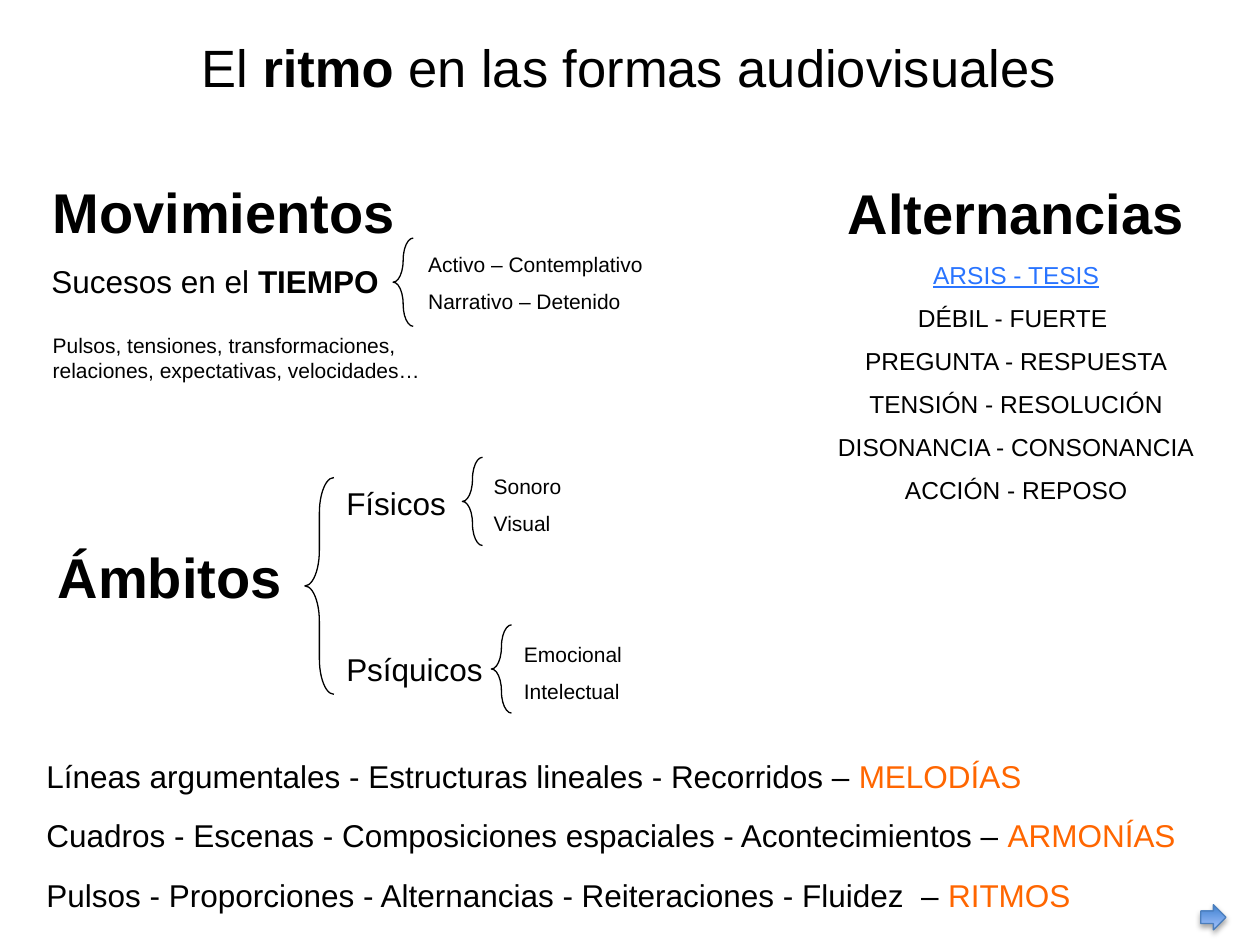
"""Build a slide on rhythm in audiovisual forms."""
from dataclasses import dataclass
from typing import NamedTuple

from lxml.etree import SubElement
from pptx import Presentation
from pptx.dml.color import RGBColor
from pptx.enum.shapes import MSO_SHAPE as Form
from pptx.enum.text import MSO_ANCHOR as Anchor, MSO_AUTO_SIZE as Fit, PP_ALIGN as Align
from pptx.oxml.ns import qn
from pptx.util import Inches, Pt

HUES = {"ink": "000000", "link": "2974FF", "key": "FF6600",
        "deep": "3F80CE", "pale": "A4C4FF", "edge": "4B7EBC"}
FRAME = {"word_wrap": True, "auto_size": Fit.SHAPE_TO_FIT_TEXT,
         "vertical_anchor": Anchor.TOP}


class Span(NamedTuple):
    text: str
    bold: bool = False
    hue: str = "ink"
    line: bool = False


class Row(NamedTuple):
    spans: list[Span]
    size: float
    gap: float = 0


@dataclass
class Block:
    box: tuple[float, float, float, float]
    rows: list[Row]
    align: Align = Align.LEFT


@dataclass
class Brace:
    box: tuple[float, float, float, float]
    bend: float = 1.23


def tint(name: str) -> RGBColor:
    return RGBColor.from_string(HUES[name])


def apply(item, values: dict) -> None:
    for name, value in values.items():
        setattr(item, name, value)


def place(shape, box: tuple) -> None:
    names = ("left", "top", "width", "height")
    apply(shape, dict(zip(names, map(Inches, box))))


def write(shape, block: Block) -> None:
    place(shape, block.box)
    frame = shape.text_frame
    apply(frame, FRAME)
    for i, row in enumerate(block.rows):
        para = frame.add_paragraph() if i else frame.paragraphs[0]
        apply(para, {"alignment": block.align, "space_before": Pt(row.gap if i else 0)})
        for span in row.spans:
            run = para.add_run()
            run.text = span.text
            apply(run.font, {"name": "Arial", "size": Pt(row.size),
                             "bold": span.bold, "underline": span.line})
            run.font.color.rgb = tint(span.hue)


def plain(shape) -> None:
    for para in shape.text_frame.paragraphs:
        props = para._p.get_or_add_pPr()
        apply_xml = {"marL": "0", "indent": "0"}
        for name, value in apply_xml.items():
            props.set(name, value)
        SubElement(props, qn("a:buNone"))


def draw_text(slide, block: Block) -> None:
    write(slide.shapes.add_textbox(0, 0, 0, 0), block)


def draw_brace(slide, brace: Brace) -> None:
    shape = slide.shapes.add_shape(Form.LEFT_BRACE, *map(Inches, brace.box))
    shape.shadow.inherit = False
    shape.adjustments[0] = brace.bend
    shape.fill.background()
    shape.line.color.rgb = tint("ink")
    shape.line.width = Pt(0.75)


def draw_arrow(slide) -> None:
    shape = slide.shapes.add_shape(Form.LEFT_ARROW, *map(Inches, (9.53, 7.18, 0.2, 0.2)))
    shape.rotation = 180
    shape.fill.gradient()
    shape.fill.gradient_angle = 90
    for stop, hue in zip(shape.fill.gradient_stops, ("deep", "pale")):
        stop.color.rgb = tint(hue)
    shape.line.color.rgb = tint("edge")
    shape.line.width = Pt(0.75)
    shape.shadow.inherit = False
    glow = SubElement(shape._element.spPr.find(qn("a:effectLst")), qn("a:outerShdw"),
                      blurRad=str(Pt(3.1)), dist=str(Pt(1.8)), dir="5400000",
                      rotWithShape="0")
    shade = SubElement(glow, qn("a:srgbClr"), val=HUES["ink"])
    SubElement(shade, qn("a:alpha"), val="35000")


def head(text: str) -> Row:
    return Row([Span(text, True)], 32)


def lines(*texts: str, size: float = 12, gap: float = 6.8) -> list[Row]:
    return [Row([Span(text)], size, gap) for text in texts]


TITLE = Block((0.98, 0.23, 8.02, 0.62), [Row([
    Span("El "), Span("ritmo", True), Span(" en las formas audiovisuales")], 30)],
    Align.CENTER)
PAIRS = Block((6.13, 1.37, 3.87, 2.76), [
    head("Alternancias"),
    Row([Span("ARSIS - TESIS", hue="link", line=True)], 14, 7.8),
    *lines("DÉBIL - FUERTE ", "PREGUNTA - RESPUESTA", "TENSIÓN - RESOLUCIÓN",
           "DISONANCIA - CONSONANCIA", "ACCIÓN - REPOSO", size=14, gap=7.8)],
    Align.CENTER)
BLOCKS = [
    Block((0.32, 1.36, 2.96, 0.64), [head("Movimientos")]),
    Block((0.31, 2.03, 2.84, 0.4),
          [Row([Span("Sucesos en el "), Span("TIEMPO", True)], 18)]),
    Block((0.32, 2.59, 3.17, 0.52),
          lines("Pulsos, tensiones, transformaciones,",
                "relaciones, expectativas, velocidades…", gap=0)),
    Block((3.3, 1.95, 2.01, 0.61), lines("Activo – Contemplativo", "Narrativo – Detenido")),
    Block((0.36, 4.26, 2.28, 0.64), [head("Ámbitos")]),
    Block((2.65, 3.79, 1.07, 0.4), lines("Físicos", size=18)),
    Block((3.82, 3.71, 1.26, 0.61), lines("Sonoro", "Visual")),
    Block((2.65, 5.11, 1.33, 0.4), lines("Psíquicos", size=18)),
    Block((4.06, 5.04, 1.09, 0.61), lines("Emocional", "Intelectual")),
]
SUMS = [
    ("Líneas argumentales - Estructuras lineales - Recorridos – ", "MELODÍAS"),
    ("Cuadros - Escenas - Composiciones espaciales - Acontecimientos – ", "ARMONÍAS"),
    ("Pulsos - Proporciones - Alternancias - Reiteraciones - Fluidez  – ", "RITMOS"),
]
BRACES = [
    Brace((2.42, 3.79, 0.23, 1.72)),
    Brace((3.12, 1.89, 0.16, 0.7), 1.18),
    Brace((3.67, 3.63, 0.16, 0.7)),
    Brace((3.9, 4.96, 0.16, 0.7)),
]


def main() -> None:
    deck = Presentation()
    apply(deck, {"slide_width": Inches(10), "slide_height": Inches(7.5)})
    slide = deck.slides.add_slide(deck.slide_layouts[1])
    draw_arrow(slide)
    write(slide.shapes.title, TITLE)
    body = slide.placeholders[1]
    write(body, PAIRS)
    plain(body)
    for block in BLOCKS:
        draw_text(slide, block)
    for i, (text, key) in enumerate(SUMS):
        row = Row([Span(text), Span(key, hue="key")], 18)
        draw_text(slide, Block((0.27, 5.96 + 0.47 * i, 9.45, 0.4), [row]))
    for brace in BRACES:
        draw_brace(slide, brace)
    deck.save("out.pptx")


if __name__ == "__main__":
    main()
